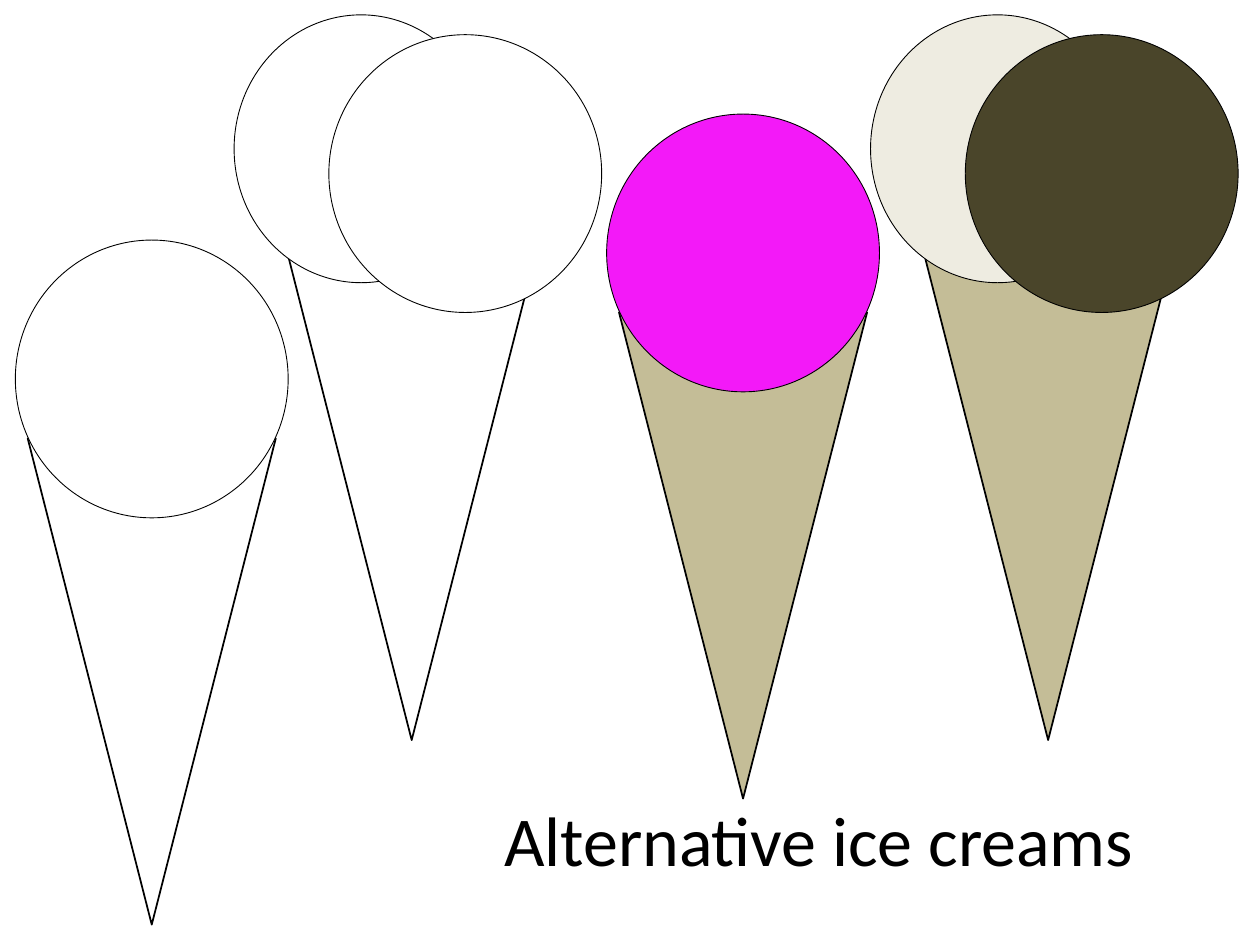
from dataclasses import dataclass

from pptx import Presentation
from pptx.dml.color import RGBColor
from pptx.enum.shapes import MSO_SHAPE
from pptx.enum.text import MSO_ANCHOR, PP_ALIGN
from pptx.shapes.autoshape import Shape
from pptx.slide import Slide
from pptx.util import Cm, Pt


@dataclass(frozen=True)
class Theme:
    font: str = "Calibri"
    title_size: float = 40
    ink: str = "000000"
    plain: str = "FFFFFF"
    wafer: str = "C4BD97"
    strawberry: str = "F319F8"
    vanilla: str = "EEECE1"
    chocolate: str = "4A452A"
    cone_line: float = 1
    scoop_line: float = 0.5


@dataclass(frozen=True)
class Scoop:
    shift_x: float
    shift_y: float
    width: float
    height: float


@dataclass(frozen=True)
class IceCream:
    left: float
    top: float
    cone_color: str
    scoops: tuple[Scoop, ...]
    scoop_colors: tuple[str, ...]


THEME = Theme()
CONE_WIDTH, CONE_HEIGHT = 5.0, 9.8
RIM_CONTROLS = ((2.59, 0.64), (2.31, 0.43))
RIM_STEPS = 16
SINGLE = (Scoop(-0.25, -4.0, 5.5, 5.6),)
DOUBLE = (Scoop(-1.08, -4.82, 5.12, 5.4), Scoop(0.83, -4.42, 5.5, 5.6))
ICE_CREAMS = (
    IceCream(0.56, 8.84, THEME.plain, SINGLE, (THEME.plain,)),
    IceCream(5.8, 5.12, THEME.plain, DOUBLE, (THEME.plain, THEME.plain)),
    IceCream(12.48, 6.3, THEME.wafer, SINGLE, (THEME.strawberry,)),
    IceCream(18.63, 5.12, THEME.wafer, DOUBLE, (THEME.vanilla, THEME.chocolate)),
)


def paint(shape: Shape, color: str, line_width: float) -> None:
    """Give a shape its fill and outline, without a shadow."""
    shape.shadow.inherit = False
    shape.fill.solid()
    shape.fill.fore_color.rgb = RGBColor.from_string(color)
    shape.line.color.rgb = RGBColor.from_string(THEME.ink)
    shape.line.width = Pt(line_width)


def rim_point(t: float) -> tuple[float, float]:
    """Return a point on the curved rim, running from right to left."""
    (x1, y1), (x2, y2) = RIM_CONTROLS
    s = 1 - t
    x = s**3 * CONE_WIDTH + 3 * s * s * t * x1 + 3 * s * t * t * x2
    y = 3 * s * s * t * y1 + 3 * s * t * t * y2
    return x, y


def draw_cone(page: Slide, ice: IceCream) -> None:
    """Draw the wafer cone with its sagging rim."""
    rim = [rim_point(step / RIM_STEPS) for step in range(RIM_STEPS)]
    outline = [(CONE_WIDTH / 2, CONE_HEIGHT), *rim]
    builder = page.shapes.build_freeform(Cm(ice.left), Cm(ice.top), scale=1.0)
    builder.add_line_segments(
        [(Cm(ice.left + x), Cm(ice.top + y)) for x, y in outline], close=True
    )
    paint(builder.convert_to_shape(), ice.cone_color, THEME.cone_line)


def draw_ice_cream(page: Slide, ice: IceCream) -> None:
    """Draw a cone and its scoops from back to front."""
    draw_cone(page, ice)
    for scoop, color in zip(ice.scoops, ice.scoop_colors):
        ball = page.shapes.add_shape(
            MSO_SHAPE.OVAL,
            Cm(ice.left + scoop.shift_x),
            Cm(ice.top + scoop.shift_y),
            Cm(scoop.width),
            Cm(scoop.height),
        )
        paint(ball, color, THEME.scoop_line)


def write_title(page: Slide, text: str) -> None:
    """Place and format the title."""
    title = page.shapes.title
    title.left, title.top = Cm(8.1), Cm(15.32)
    title.width, title.height = Cm(16.81), Cm(3.18)
    title.text_frame.vertical_anchor = MSO_ANCHOR.MIDDLE
    para = title.text_frame.paragraphs[0]
    para.alignment = PP_ALIGN.CENTER
    span = para.add_run()
    span.text = text
    span.font.name = THEME.font
    span.font.size = Pt(THEME.title_size)
    span.font.color.rgb = RGBColor.from_string(THEME.ink)


def main() -> None:
    """Build and save the deck."""
    deck = Presentation()
    deck.slide_width, deck.slide_height = Cm(25.4), Cm(19.05)
    page = deck.slides.add_slide(deck.slide_layouts.get_by_name("Title Only"))
    write_title(page, "Alternative ice creams")
    for ice in ICE_CREAMS:
        draw_ice_cream(page, ice)
    deck.save("out.pptx")


if __name__ == "__main__":
    main()
